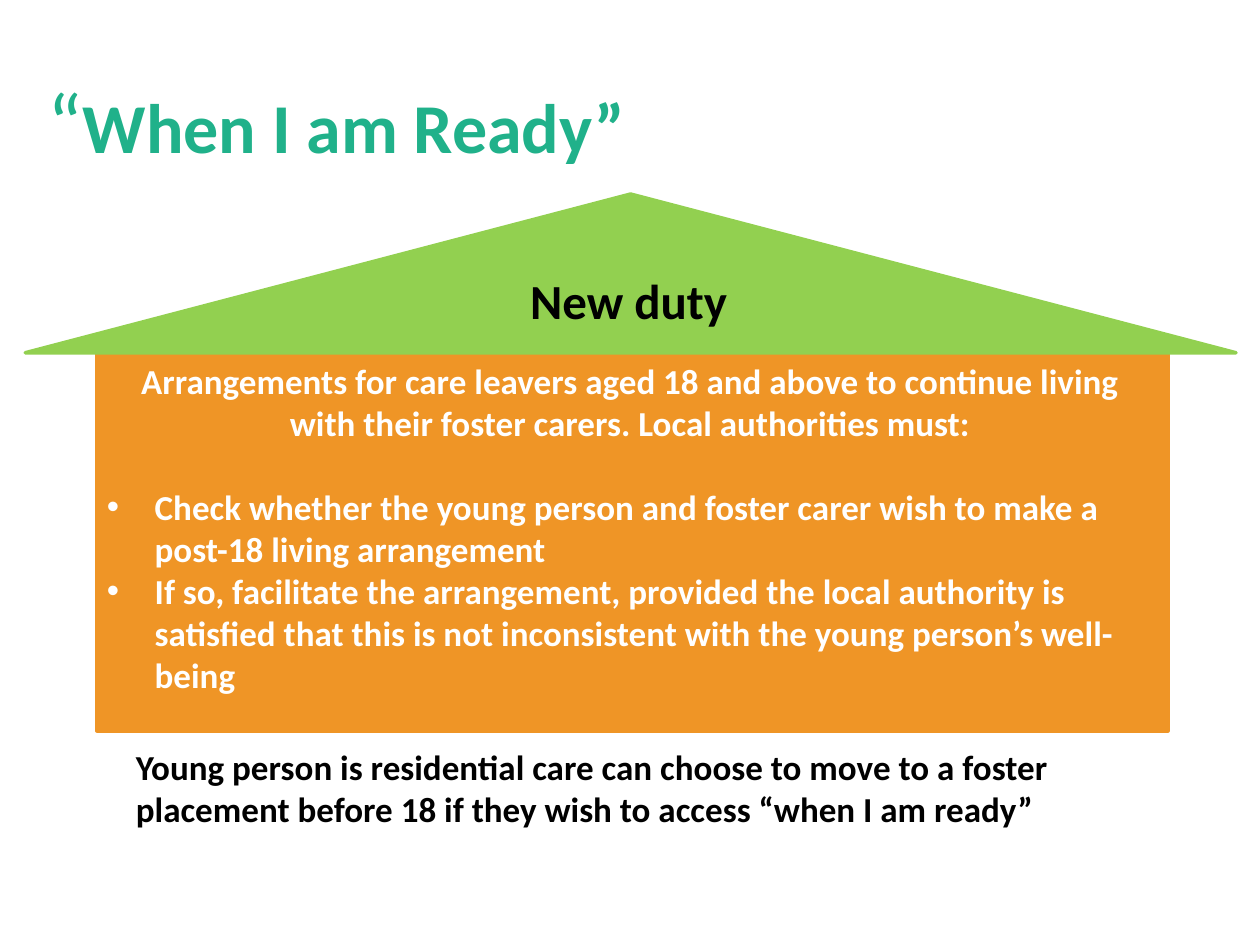
from lxml import etree
from pptx import Presentation
from pptx.dml.color import RGBColor
from pptx.enum.shapes import MSO_SHAPE as Shape
from pptx.enum.text import MSO_AUTO_SIZE as AutoSize, PP_ALIGN as Align
from pptx.oxml.ns import qn
from pptx.util import Inches, Pt

GREEN, ORANGE, TEAL = "92D050", "EF9526", "20B18A"
WHITE, BLACK = "FFFFFF", "000000"


def colour(value):
    return RGBColor.from_string(value)


class DutySlide:
    """Draws styled shapes and text on one slide."""

    body = {"name": "Calibri", "size": Pt(20), "bold": True}

    def __init__(self, page):
        self.page = page

    def block(self, preset, place, fill):
        shape = self.page.shapes.add_shape(preset, *map(Inches, place))
        shape.shadow.inherit = False
        shape.fill.solid()
        shape.fill.fore_color.rgb = colour(fill)
        shape.line.color.rgb = colour(fill)
        shape.line.width = Pt(2)

    def text_box(self, place, wrap=True):
        box = self.page.shapes.add_textbox(*map(Inches, place))
        box.text_frame.word_wrap = wrap
        box.text_frame.auto_size = AutoSize.SHAPE_TO_FIT_TEXT
        return box.text_frame

    def span(self, para, text, ink, **changes):
        span = para.add_run()
        span.text = text
        for name, value in {**self.body, **changes}.items():
            setattr(span.font, name, value)
        span.font.color.rgb = colour(ink)

    def bullet(self, frame, text, ink, gap=0):
        para = frame.add_paragraph()
        para.space_before = Pt(gap)
        props = para._p.get_or_add_pPr()
        indent = Inches(0.38)
        props.set("marL", str(indent))
        props.set("indent", str(-indent))
        etree.SubElement(props, qn("a:buFont")).set("typeface", "Arial")
        etree.SubElement(props, qn("a:buChar")).set("char", "•")
        self.span(para, text, ink)


def main():
    deck = Presentation()
    deck.slide_width, deck.slide_height = Inches(10), Inches(7.5)
    slide = DutySlide(deck.slides.add_slide(deck.slide_layouts[6]))

    slide.block(Shape.RECTANGLE, (0.77, 2.81, 8.5, 2.99), ORANGE)
    slide.block(Shape.ISOSCELES_TRIANGLE, (0.2, 1.54, 9.61, 1.26), GREEN)

    roof = slide.text_box((4.11, 2.1, 1.78, 0.57), wrap=False)
    slide.span(roof.paragraphs[0], "New duty", BLACK, size=Pt(28))

    duties = slide.text_box((0.75, 2.8, 8.5, 2.79))
    intro = duties.paragraphs[0]
    intro.alignment = Align.CENTER
    slide.span(intro, "Arrangements for care leavers aged 18 and above to continue living "
               "with their foster carers. Local authorities must:", WHITE)
    slide.bullet(duties, "Check whether the young person and foster carer wish to make a "
                 "post-18 living arrangement", WHITE, gap=24)
    slide.bullet(duties, "If so, facilitate the arrangement, provided the local authority is "
                 "satisfied that this is not inconsistent with the young person’s well-being", WHITE)

    footnote = slide.text_box((0.98, 5.87, 7.72, 0.77))
    slide.span(footnote.paragraphs[0], "Young person is residential care can choose to move to a foster "
               "placement before 18 if they wish to access “when I am ready”", BLACK)

    title = slide.text_box((0.28, 0.5, 5.98, 0.91)).paragraphs[0]
    slide.span(title, "“", TEAL, size=Pt(48), bold=False)
    slide.span(title, "When I am Ready”", TEAL, size=Pt(40))

    deck.save("out.pptx")


if __name__ == "__main__":
    main()
